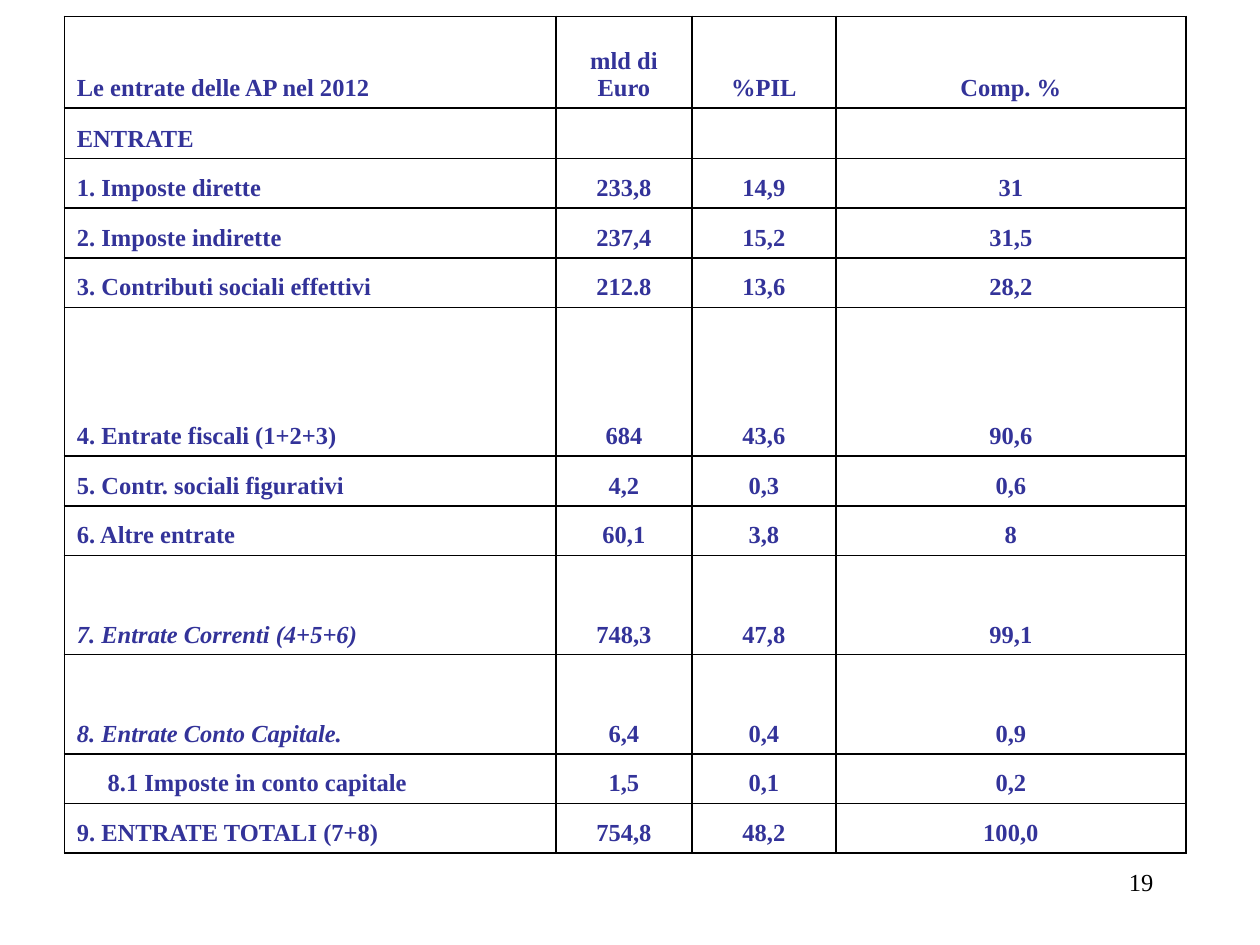
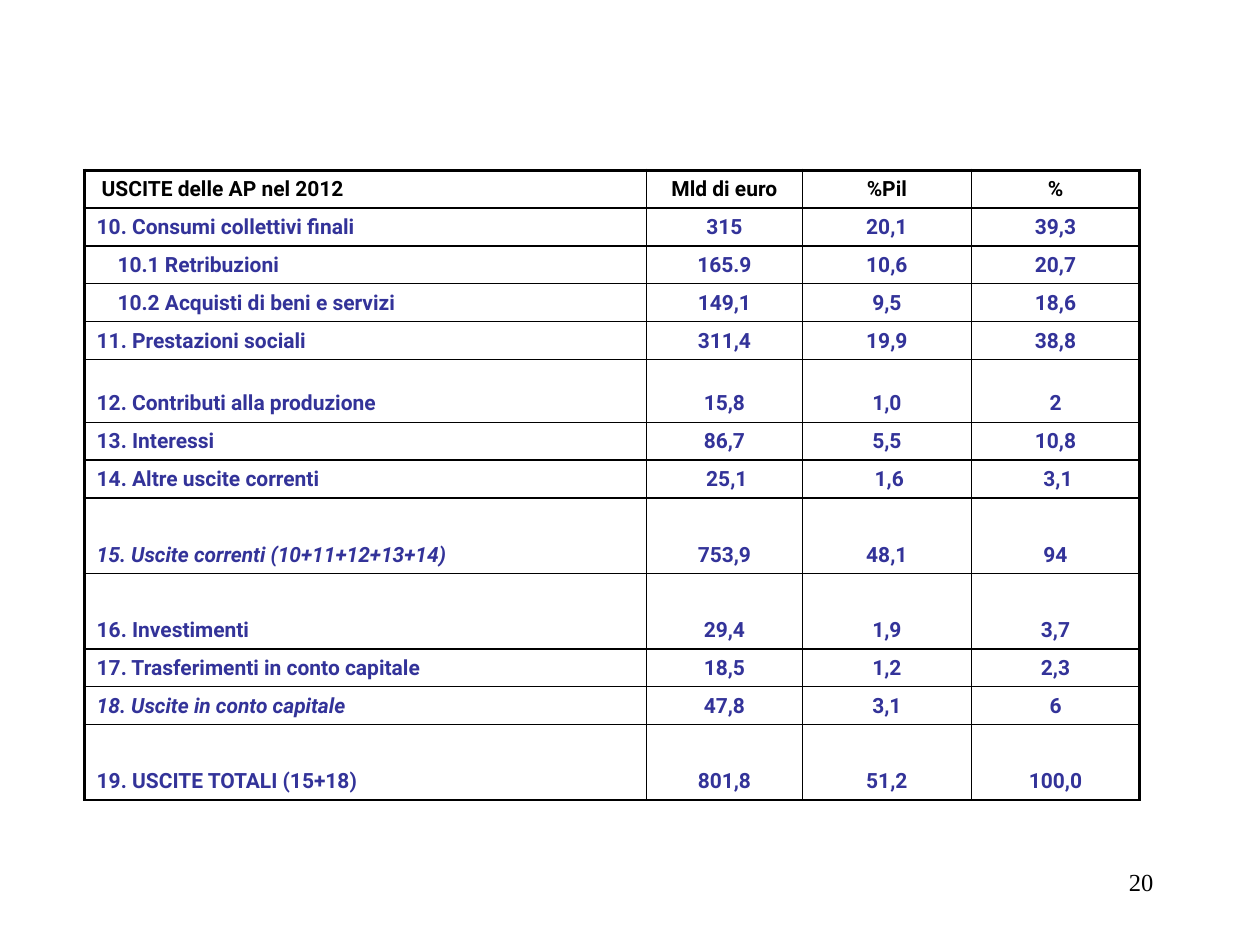
from dataclasses import dataclass

import pptx
import pptx.dml.color
import pptx.enum.text
import pptx.oxml.ns
import pptx.slide
import pptx.table
import pptx.text.text
import pptx.util
from lxml import etree

Cm = pptx.util.Cm
Pt = pptx.util.Pt
RGB = pptx.dml.color.RGBColor
PP_ALIGN = pptx.enum.text.PP_ALIGN


@dataclass(frozen=True)
class Theme:
    black: str = "000000"
    accent: str = "333399"
    serif: str = "Times New Roman"
    sans: str = "Roboto"
    large: int = 14
    small: int = 12
    thin: int = 1
    thick: int = 2
    margin: float = 0.25


THEME = Theme()


@dataclass(frozen=True)
class Row:
    label: str
    values: tuple[str, str, str] = ("", "", "")
    units: float = 1
    italic: bool = False
    indent: float = 0
    value_indent: float = 0
    color: str = THEME.accent


@dataclass(frozen=True)
class Budget:
    page: int
    left: float
    top: float
    widths: tuple[float, ...]
    unit: float
    font: str
    size: int
    frame: int
    rows: tuple[Row, ...]


REVENUE = Budget(
    page=19, left=1.3, top=0.33, widths=(9.91, 2.74, 2.9, 7.06), unit=1,
    font=THEME.serif, size=THEME.large, frame=THEME.thin,
    rows=(
        Row("Le entrate delle AP nel 2012", ("mld di Euro", "%PIL", "Comp. %"), units=1.85),
        Row("ENTRATE"),
        Row("1. Imposte dirette", ("233,8", "14,9", "31")),
        Row("2. Imposte indirette", ("237,4", "15,2", "31,5")),
        Row("3. Contributi sociali effettivi", ("212.8", "13,6", "28,2")),
        Row("4. Entrate fiscali (1+2+3)", ("684", "43,6", "90,6"), units=3),
        Row("5. Contr. sociali figurativi", ("4,2", "0,3", "0,6")),
        Row("6. Altre entrate", ("60,1", "3,8", "8")),
        Row("7. Entrate Correnti (4+5+6)", ("748,3", "47,8", "99,1"), units=2, italic=True),
        Row("8. Entrate Conto Capitale.", ("6,4", "0,4", "0,9"), units=2, italic=True),
        Row("8.1 Imposte in conto capitale", ("1,5", "0,1", "0,2"), indent=0.62),
        Row("9. ENTRATE TOTALI (7+8)", ("754,8", "48,2", "100,0")),
    ),
)

SPENDING = Budget(
    page=20, left=1.7, top=3.43, widths=(11.33, 3.15, 3.4, 3.4), unit=0.76,
    font=THEME.sans, size=THEME.small, frame=THEME.thick,
    rows=(
        Row("USCITE delle AP nel 2012", ("Mld di euro", "%Pil", "%"), indent=0.1,
            color=THEME.black),
        Row("10. Consumi collettivi finali", ("315", "20,1", "39,3")),
        Row("10.1 Retribuzioni", ("165.9", "10,6", "20,7"), indent=0.42),
        Row("10.2 Acquisti di beni e servizi", ("149,1", "9,5", "18,6"), indent=0.42),
        Row("11. Prestazioni sociali", ("311,4", "19,9", "38,8")),
        Row("12. Contributi alla produzione", ("15,8", "1,0", "2"), units=1.67),
        Row("13. Interessi", ("86,7", "5,5", "10,8")),
        Row("14. Altre uscite correnti", ("25,1", "1,6", "3,1"), value_indent=0.1),
        Row("15. Uscite correnti (10+11+12+13+14)", ("753,9", "48,1", "94"), units=2,
            italic=True),
        Row("16. Investimenti", ("29,4", "1,9", "3,7"), units=2),
        Row("17. Trasferimenti in conto capitale", ("18,5", "1,2", "2,3")),
        Row("18. Uscite in conto capitale", ("47,8", "3,1", "6"), italic=True),
        Row("19. USCITE TOTALI (15+18)", ("801,8", "51,2", "100,0"), units=2),
    ),
)


def write(tf: pptx.text.text.TextFrame, text: str, *, font: str, size: int,
          color: str = THEME.black, bold: bool = False, italic: bool = False,
          align: PP_ALIGN = PP_ALIGN.LEFT) -> None:
    tf.word_wrap = True
    p = tf.paragraphs[0]
    p.alignment = align
    r = p.add_run()
    r.text = text
    r.font.name = font
    r.font.size = Pt(size)
    r.font.bold = bold
    r.font.italic = italic
    r.font.color.rgb = RGB.from_string(color)


def set_borders(cell: pptx.table._Cell, widths: dict[str, int]) -> None:
    qn = pptx.oxml.ns.qn
    tc_pr = cell._tc.get_or_add_tcPr()
    for side, width in widths.items():
        ln = etree.SubElement(tc_pr, qn(f"a:ln{side}"), w=str(Pt(width)))
        fill = etree.SubElement(ln, qn("a:solidFill"))
        etree.SubElement(fill, qn("a:srgbClr"), val=THEME.black)


def add_budget_table(s: pptx.slide.Slide, budget: Budget) -> None:
    heights = [budget.unit * row.units for row in budget.rows]
    last = len(budget.widths) - 1
    table = s.shapes.add_table(
        len(heights), len(budget.widths), Cm(budget.left), Cm(budget.top),
        Cm(sum(budget.widths)), Cm(sum(heights))).table
    table.first_row = False
    table.horz_banding = False
    for column, width in zip(table.columns, budget.widths):
        column.width = Cm(width)
    for i, row in enumerate(budget.rows):
        table.rows[i].height = Cm(heights[i])
        for j, text in enumerate((row.label, *row.values)):
            cell = table.cell(i, j)
            cell.vertical_anchor = pptx.enum.text.MSO_ANCHOR.BOTTOM
            indent = row.value_indent if j else row.indent
            cell.margin_left = Cm(THEME.margin + indent)
            set_borders(cell, {
                "L": THEME.thin if j else budget.frame,
                "R": budget.frame if j == last else THEME.thin,
                "T": THEME.thin if i else budget.frame,
                "B": THEME.thin,
            })
            cell.fill.background()
            write(cell.text_frame, text, font=budget.font, size=budget.size,
                  color=row.color, bold=True, italic=row.italic and j == 0,
                  align=PP_ALIGN.CENTER if j else PP_ALIGN.LEFT)


def add_page_number(s: pptx.slide.Slide, page: int) -> None:
    sp = s.shapes.add_textbox(Cm(18.2), Cm(17.35), Cm(5.3), Cm(1.27))
    write(sp.text_frame, str(page), font=THEME.serif, size=THEME.large,
          align=PP_ALIGN.RIGHT)


def main() -> None:
    prs = pptx.Presentation()
    prs.slide_width = Cm(25.4)
    prs.slide_height = Cm(19.05)
    for budget in (REVENUE, SPENDING):
        s = prs.slides.add_slide(prs.slide_layouts[6])
        add_page_number(s, budget.page)
        add_budget_table(s, budget)
    prs.save("out.pptx")


if __name__ == "__main__":
    main()
